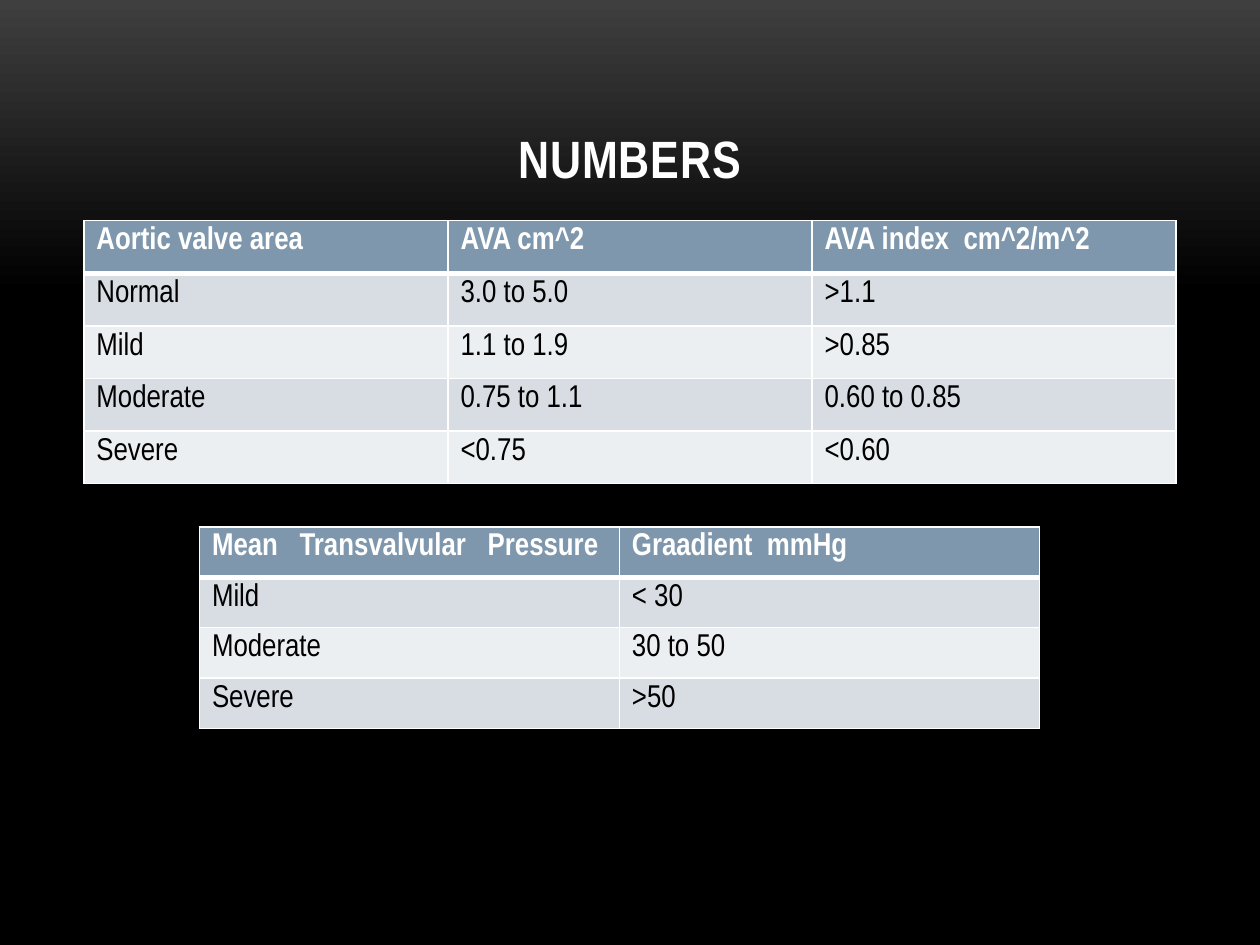
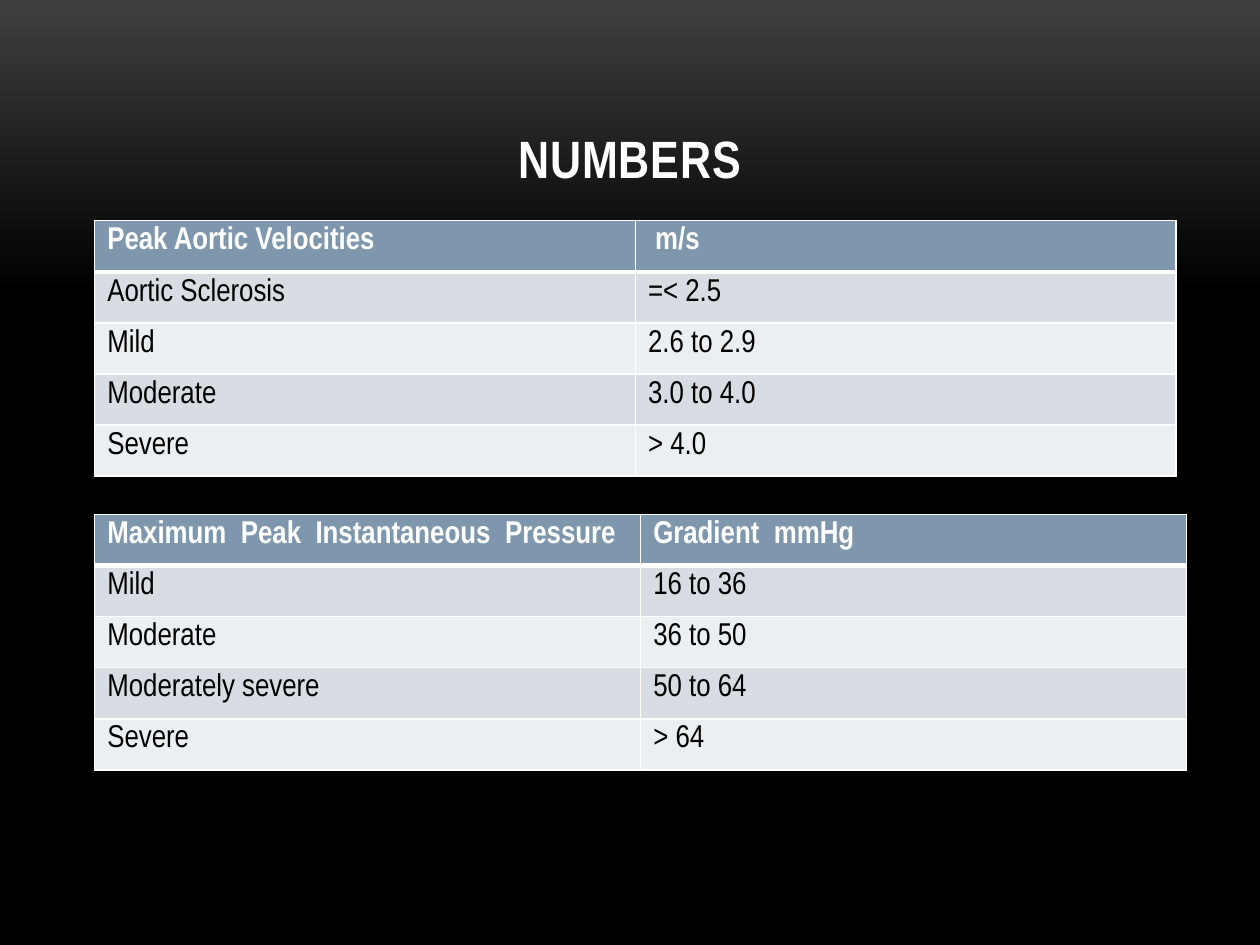
import copy
import dataclasses

import pptx
import pptx.dml.color
import pptx.enum.text
import pptx.oxml
import pptx.oxml.ns
import pptx.util

Cm = pptx.util.Cm
Pt = pptx.util.Pt
RGBColor = pptx.dml.color.RGBColor

FONT = "Arial Narrow"
WHITE = RGBColor(0xFF, 0xFF, 0xFF)
BLACK = RGBColor(0x00, 0x00, 0x00)
CHARCOAL = RGBColor(0x3F, 0x3F, 0x3F)
HEADER_BLUE = RGBColor(0x7E, 0x97, 0xAD)
BANDS = (RGBColor(0xD8, 0xDD, 0xE3), RGBColor(0xEC, 0xEF, 0xF1))

TITLE_BOX = (Cm(1.69), Cm(0.76), Cm(22.01), Cm(3.18))
SPACE_WIDTH = 4.1


@dataclasses.dataclass
class Header:
    """A column heading: phrases set apart by a gap measured in spaces."""
    phrases: tuple
    gap: int = 1
    indent: int = 0


def style_run(span, size, color, bold, spacing=0):
    """Set the font of a run, with letter spacing in points."""
    span.font.name = FONT
    span.font.size = Pt(size)
    span.font.bold = bold
    span.font.color.rgb = color
    if spacing:
        span.font._element.set("spc", str(round(spacing * 100)))


def set_background(master):
    """Give every slide the dark fade from the top edge."""
    fill = master.background.fill
    fill.gradient()
    fill.gradient_angle = 270
    top, middle = fill.gradient_stops
    top.color.rgb, top.position = CHARCOAL, 0
    middle.color.rgb, middle.position = BLACK, 0.31
    stops = master.element.xpath("./p:cSld/p:bg//a:gsLst")[0]
    bottom = copy.deepcopy(stops[-1])
    bottom.set("pos", "100000")
    stops.append(bottom)


def add_title(page, text):
    """Place the slide title, centred at the bottom of its box."""
    frame = page.shapes.add_textbox(*TITLE_BOX).text_frame
    frame.word_wrap = True
    frame.vertical_anchor = pptx.enum.text.MSO_ANCHOR.BOTTOM
    frame.text = text
    para = frame.paragraphs[0]
    para.alignment = pptx.enum.text.PP_ALIGN.CENTER
    style_run(para.runs[0], 30, WHITE, True, 0.5)


def set_borders(cell, row):
    """Draw white cell borders, thick between heading and body."""
    properties = cell._tc.get_or_add_tcPr()
    thick = {0: "lnB", 1: "lnT"}.get(row)
    for side in ("lnL", "lnR", "lnT", "lnB"):
        width = Pt(3 if side == thick else 1)
        properties.append(pptx.oxml.parse_xml(
            f'<a:{side} {pptx.oxml.ns.nsdecls("a")} w="{width}"><a:solidFill>'
            f'<a:srgbClr val="{WHITE}"/></a:solidFill></a:{side}>'))


def fill_heading(cell, header):
    """Write a column heading, widening the space between its phrases."""
    para = cell.text_frame.paragraphs[0]
    cell.margin_left += Pt(header.indent * SPACE_WIDTH)
    for index, phrase in enumerate(header.phrases):
        if index:
            space = para.add_run()
            space.text = " "
            style_run(space, 18, WHITE, True, (header.gap - 1) * SPACE_WIDTH)
        span = para.add_run()
        span.text = phrase
        style_run(span, 18, WHITE, True)


def add_grading_table(page, box, headers, rows):
    """Place a table of severity grades with equal columns and rows."""
    left, top, width, row_height = (Cm(length) for length in box)
    count = len(rows) + 1
    table = page.shapes.add_table(
        count, len(headers), left, top, width, row_height * count).table
    for row, values in enumerate([headers, *rows]):
        table.rows[row].height = row_height
        for column, value in enumerate(values):
            cell = table.cell(row, column)
            set_borders(cell, row)
            cell.fill.solid()
            if row == 0:
                cell.fill.fore_color.rgb = HEADER_BLUE
                fill_heading(cell, value)
            else:
                cell.fill.fore_color.rgb = BANDS[(row - 1) % 2]
                cell.text_frame.text = value
                style_run(cell.text_frame.paragraphs[0].runs[0], 18, BLACK, False)


def add_numbers_slide(deck, tables):
    """Add a slide titled Numbers holding the given tables."""
    page = deck.slides.add_slide(deck.slide_layouts[6])
    add_title(page, "NUMBERS")
    for box, headers, rows in tables:
        add_grading_table(page, box, headers, rows)


VALVE_AREA = (
    (1.69, 4.45, 22.02, 1.06),
    [Header(("Aortic valve area",)), Header(("AVA cm^2",)),
     Header(("AVA index", "cm^2/m^2"), gap=2)],
    [("Normal", "3.0 to 5.0", ">1.1"),
     ("Mild", "1.1 to 1.9", ">0.85"),
     ("Moderate", "0.75 to 1.1", "0.60 to 0.85"),
     ("Severe", "<0.75", "<0.60")])

MEAN_PRESSURE = (
    (4.02, 10.62, 16.93, 0.89),
    [Header(("Mean", "Transvalvular", "Pressure"), gap=3),
     Header(("Graadient", "mmHg"), gap=2)],
    [("Mild", "< 30"), ("Moderate", "30 to 50"), ("Severe", ">50")])

PEAK_VELOCITY = (
    (1.91, 4.45, 21.8, 1.03),
    [Header(("Peak Aortic Velocities",)), Header(("m/s",), indent=1)],
    [("Aortic Sclerosis", "=< 2.5"), ("Mild", "2.6 to 2.9"),
     ("Moderate", "3.0 to 4.0"), ("Severe", "> 4.0")])

PEAK_PRESSURE = (
    (1.91, 10.37, 22.01, 1.03),
    [Header(("Maximum", "Peak", "Instantaneous", "Pressure"), gap=2),
     Header(("Gradient", "mmHg"), gap=2)],
    [("Mild", "16 to 36"), ("Moderate", "36 to 50"),
     ("Moderately severe", "50 to 64"), ("Severe", "> 64")])


def main():
    """Build the deck and save it."""
    deck = pptx.Presentation()
    deck.slide_width, deck.slide_height = Cm(25.4), Cm(19.05)
    set_background(deck.slide_master)
    add_numbers_slide(deck, [VALVE_AREA, MEAN_PRESSURE])
    add_numbers_slide(deck, [PEAK_VELOCITY, PEAK_PRESSURE])
    deck.save("out.pptx")


if __name__ == "__main__":
    main()
